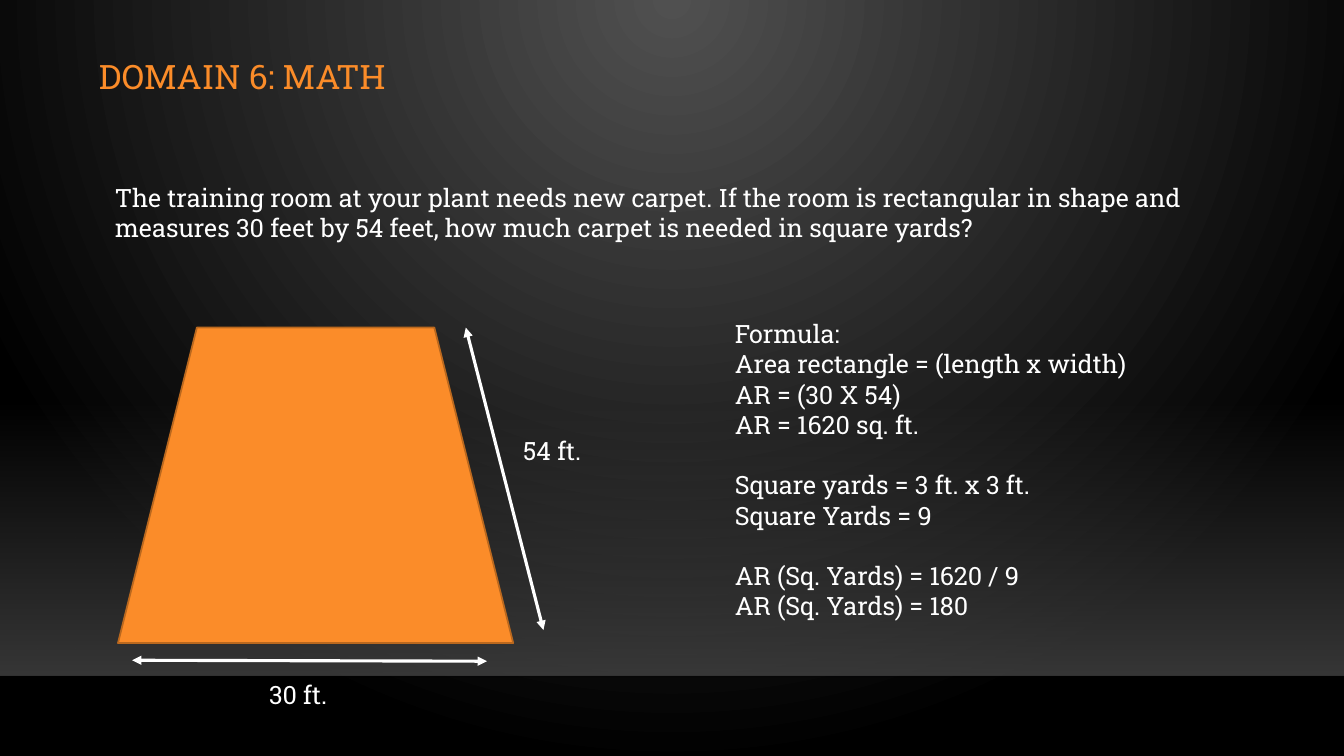
from lxml import etree
from pptx import Presentation
from pptx.dml.color import RGBColor
from pptx.enum.shapes import MSO_CONNECTOR, MSO_SHAPE
from pptx.enum.text import MSO_ANCHOR, PP_ALIGN
from pptx.oxml.ns import qn
from pptx.util import Inches, Pt

ORANGE = RGBColor(0xFB, 0x8C, 0x29)
BROWN = RGBColor(0xBA, 0x68, 0x1E)
WHITE = RGBColor(0xFF, 0xFF, 0xFF)
NEAR_BLACK = RGBColor(0x00, 0x00, 0x01)
DARK_GRAY = RGBColor(0x50, 0x50, 0x50)
FLOOR_GRAY = RGBColor(0x45, 0x45, 0x45)
BLACK = RGBColor(0x00, 0x00, 0x00)
FONT = "Roboto Slab"
STRAIGHT = MSO_CONNECTOR.STRAIGHT
LINE_PITCH = Pt(21.6)
WIDTH, HEIGHT, HORIZON = 13.33, 7.5, 6.71

TITLE = "DOMAIN 6: MATH"
QUESTION = (
    "The training room at your plant needs new carpet. If the room is rectangular in shape "
    "and measures 30 feet by 54 feet, how much carpet is needed in square yards?"
)
WORKING = [
    ["Formula:", "Area rectangle = (length x width)", "AR = (30 X 54)", "AR = 1620 sq. ft."],
    ["Square yards = 3 ft. x 3 ft.", "Square Yards = 9"],
    ["AR (Sq. Yards) = 1620 / 9", "AR (Sq. Yards) = 180"],
]
# Each text: groups of lines, then left, top, width, height
TEXTS = [
    ([[QUESTION]], (1.04, 1.76, 11.13, 0.71)),
    ([["30 ft."]], (2.57, 6.69, 1.34, 0.4)),
    ([["54 ft."]], (5.09, 4.27, 0.95, 0.4)),
    (WORKING, (7.19, 3.11, 4.61, 3.13)),
]
ROOM = (1.17, 3.25, 3.92, 3.13)
DIMENSIONS = [(1.31, 6.55, 4.83, 6.56), (4.62, 3.25, 5.39, 6.25)]


def inches(values):
    return [Inches(value) for value in values]


def set_format(target, values):
    for name, value in values.items():
        setattr(target, name, value)


def style_font(font, size, color):
    set_format(font, {"name": FONT, "size": Pt(size)})
    font.color.rgb = color


def add_alpha(color_element, percent):
    etree.SubElement(color_element, qn("a:alpha"), val=str(percent * 1000))


def set_gradient(fill, owner, stops):
    """Fill with (color, opacity) end stops and return the gradient element."""
    fill.gradient()
    gradient = owner.find(".//" + qn("a:gradFill"))
    for child in list(gradient):
        gradient.remove(child)
    stop_list = etree.SubElement(gradient, qn("a:gsLst"))
    for position, (color, opacity) in zip((0, 100000), stops):
        stop = etree.SubElement(stop_list, qn("a:gs"), pos=str(position))
        color_element = etree.SubElement(stop, qn("a:srgbClr"), val=str(color))
        if opacity < 100:
            add_alpha(color_element, opacity)
    return gradient


def add_line(slide, ends, color, width):
    line = slide.shapes.add_connector(STRAIGHT, *inches(ends))
    line.line.color.rgb = color
    line.line.width = Pt(width)
    etree.SubElement(line._element.spPr, qn("a:effectLst"))
    return line


def add_background(slide):
    gradient = set_gradient(
        slide.background.fill, slide._element, [(DARK_GRAY, 100), (BLACK, 100)]
    )
    circle = etree.SubElement(gradient, qn("a:path"))
    circle.set("path", "circle")
    etree.SubElement(circle, qn("a:fillToRect"), l="43000", t="0", r="43000", b="100000")

    floor = slide.shapes.add_shape(MSO_SHAPE.RECTANGLE, *inches((0, 3.96, WIDTH, 2.74)))
    floor.shadow.inherit = False
    floor.line.fill.background()
    gradient = set_gradient(floor.fill, floor._element, [(FLOOR_GRAY, 0), (FLOOR_GRAY, 80)])
    etree.SubElement(gradient, qn("a:lin"), ang="5400000", scaled="0")

    horizon = add_line(slide, (0, HORIZON, WIDTH, HORIZON), NEAR_BLACK, 1)
    add_alpha(horizon._element.spPr.find(".//" + qn("a:srgbClr")), 20)


def add_title(slide):
    title = slide.shapes.title
    bounds = inches((0.88, 0.47, 11, 0.62))
    set_format(title, dict(zip(("left", "top", "width", "height"), bounds)))
    title.text_frame.text = TITLE
    title.text_frame.vertical_anchor = MSO_ANCHOR.MIDDLE
    paragraph = title.text_frame.paragraphs[0]
    set_format(paragraph, {"alignment": PP_ALIGN.LEFT, "line_spacing": 0.9})
    style_font(paragraph.font, 24, ORANGE)


def add_text(slide, groups, bounds):
    frame = slide.shapes.add_textbox(*inches(bounds)).text_frame
    frame.word_wrap = True
    for group_index, lines in enumerate(groups):
        for line_index, text in enumerate(lines):
            first = group_index == line_index == 0
            paragraph = frame.paragraphs[0] if first else frame.add_paragraph()
            paragraph.text = text
            if group_index and not line_index:
                paragraph.space_before = LINE_PITCH
            style_font(paragraph.font, 18, WHITE)


def add_room(slide):
    room = slide.shapes.add_shape(MSO_SHAPE.TRAPEZOID, *inches(ROOM))
    room.shadow.inherit = False
    room.fill.solid()
    room.fill.fore_color.rgb = ORANGE
    room.line.color.rgb = BROWN
    room.line.width = Pt(1.25)
    for ends in DIMENSIONS:
        arrow = add_line(slide, ends, WHITE, 2.25)
        outline = arrow._element.spPr.find(qn("a:ln"))
        for end in ("a:headEnd", "a:tailEnd"):
            etree.SubElement(outline, qn(end), type="triangle")


def main():
    presentation = Presentation()
    presentation.slide_width = Inches(WIDTH)
    presentation.slide_height = Inches(HEIGHT)
    slide = presentation.slides.add_slide(presentation.slide_layouts.get_by_name("Title Only"))
    add_background(slide)
    add_title(slide)
    add_room(slide)
    for groups, bounds in TEXTS:
        add_text(slide, groups, bounds)
    presentation.save("out.pptx")


if __name__ == "__main__":
    main()
